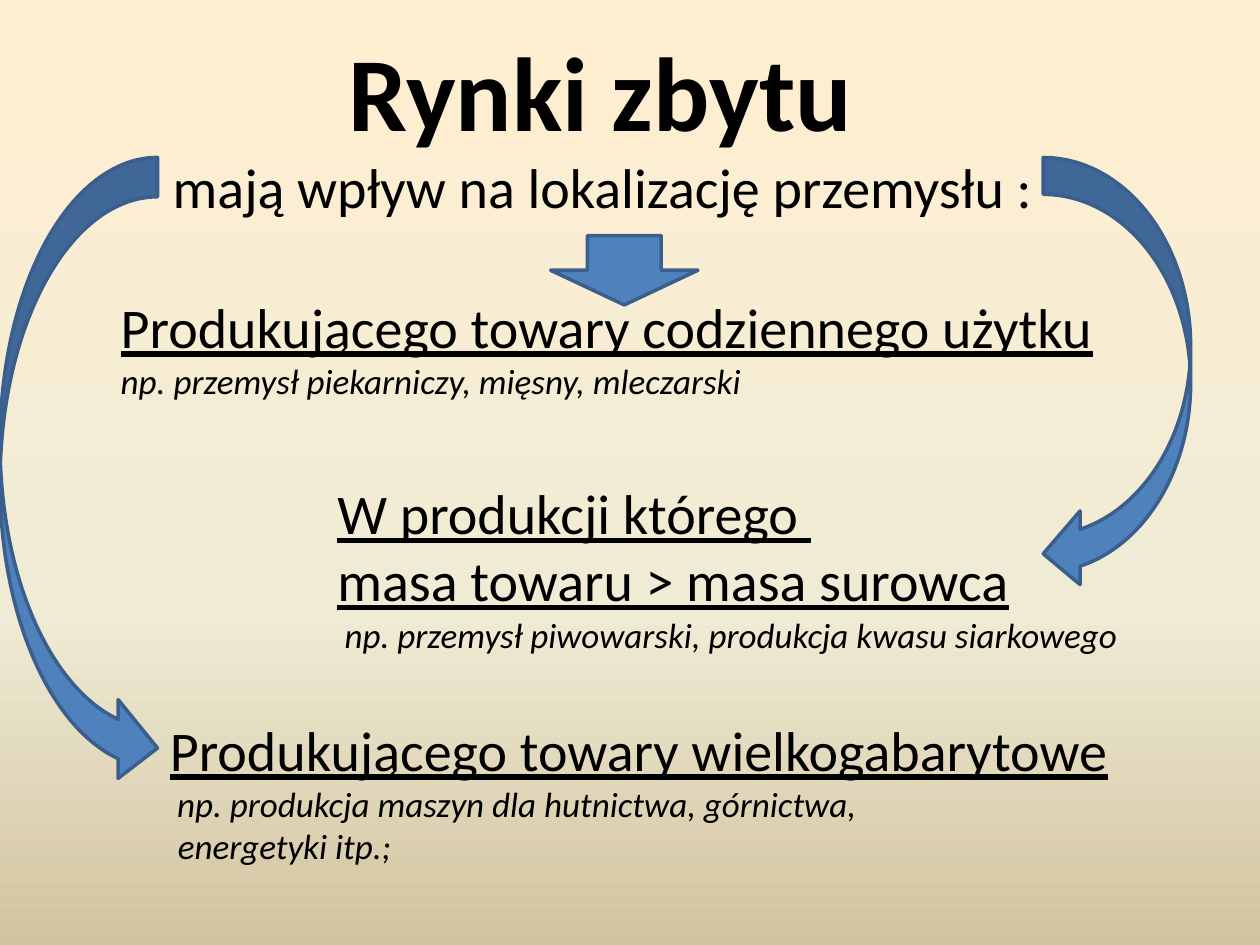
from copy import deepcopy
from dataclasses import dataclass

from pptx import Presentation
from pptx import util as u
from pptx.dml.color import RGBColor
from pptx.enum import shapes, text

# Palette and type
BLACK = RGBColor(0x00, 0x00, 0x00)
ARROW_FILL = RGBColor(0x4F, 0x81, 0xBD)
ARROW_LINE = RGBColor(0x3A, 0x5F, 0x8C)
BACKDROP = (
    (0, RGBColor(0xFF, 0xEF, 0xD1)),
    (0.65, RGBColor(0xF0, 0xEB, 0xD5)),
    (1, RGBColor(0xD1, 0xC3, 0x9F)),
)
FONT = "Calibri"
HEADING = dict(size=32, underline=True)
EXAMPLE = dict(size=20, italic=True)
INDENT = (" ", dict(size=18))

# Positions are counted in eighths of an inch
GRID = 8
COLUMNS, ROWS = 10 * GRID, 7.5 * GRID


@dataclass(frozen=True)
class Area:
    column: float
    row: float
    columns: float
    rows: float

    def lengths(self) -> list:
        return [u.Inches(n / GRID) for n in (self.column, self.row, self.columns, self.rows)]


@dataclass(frozen=True)
class Block:
    area: Area
    lines: tuple  # each line is a tuple of (wording, format) pairs


@dataclass(frozen=True)
class Arrow:
    kind: shapes.MSO_SHAPE
    area: Area


TITLE = Block(Area(9.36, 1.28, 57.52, 13.2), (
    (("Rynki zbytu", dict(size=60, bold=True)),),
    ((" mają wpływ na lokalizację przemysłu :", dict(size=32)),),
))

BLOCKS = (
    Block(Area(6.88, 18.16, 63.92, 7.84), (
        (("Produkującego towary codziennego użytku", HEADING),),
        (("np. przemysł piekarniczy, mięsny, mleczarski", EXAMPLE),),
    )),
    Block(Area(20.64, 30, 51.52, 12.08), (
        (("W produkcji którego ", HEADING),),
        (("masa towaru > masa surowca", HEADING),),
        (INDENT, ("np. przemysł piwowarski, produkcja kwasu siarkowego", EXAMPLE)),
    )),
    Block(Area(10, 45.04, 61.76, 10.48), (
        (("Produkującego towary wielkogabarytowe", HEADING),),
        (INDENT, ("np. produkcja maszyn dla hutnictwa, górnictwa,", EXAMPLE)),
        ((" energetyki itp.;", EXAMPLE),),
    )),
)

ARROWS = (
    Arrow(shapes.MSO_SHAPE.CURVED_RIGHT_ARROW, Area(0, 10, 10, 40)),
    Arrow(shapes.MSO_SHAPE.CURVED_LEFT_ARROW, Area(66.24, 10, 9.36, 27.5)),
    Arrow(shapes.MSO_SHAPE.DOWN_ARROW, Area(34.96, 14.96, 9.36, 4.4)),
)


def add_span(para, wording: str, *, size: float, bold: bool = False,
             italic: bool = False, underline: bool = False) -> None:
    span = para.add_run()
    span.text = wording
    font = span.font
    font.name, font.size = FONT, u.Pt(size)
    font.bold, font.italic, font.underline = bold, italic, underline
    font.color.rgb = BLACK


def fill_box(box, block: Block) -> None:
    box.left, box.top, box.width, box.height = block.area.lengths()
    frame = box.text_frame
    frame.word_wrap = False
    frame.auto_size = text.MSO_AUTO_SIZE.SHAPE_TO_FIT_TEXT
    frame.vertical_anchor = text.MSO_ANCHOR.TOP
    for index, line in enumerate(block.lines):
        para = frame.add_paragraph() if index else frame.paragraphs[0]
        para.alignment = text.PP_ALIGN.LEFT
        for wording, style in line:
            add_span(para, wording, **style)


def add_arrow(page, arrow: Arrow) -> None:
    shape = page.shapes.add_shape(arrow.kind, *arrow.area.lengths())
    shape.shadow.inherit = False
    shape.fill.solid()
    shape.fill.fore_color.rgb = ARROW_FILL
    shape.line.color.rgb = ARROW_LINE
    shape.line.width = u.Pt(2)


def paint_background(page) -> None:
    fill = page.background.fill
    fill.gradient()
    fill.gradient_angle = 270
    # The default gradient has two stops: add a third
    stop = page._element.xpath(".//p:bg//a:gs")[0]
    stop.addnext(deepcopy(stop))
    for stop, (position, color) in zip(fill.gradient_stops, BACKDROP):
        stop.position = position
        stop.color.rgb = color


def main() -> None:
    deck = Presentation()
    deck.slide_width = u.Inches(COLUMNS / GRID)
    deck.slide_height = u.Inches(ROWS / GRID)
    page = deck.slides.add_slide(deck.slide_layouts.get_by_name("Title Only"))
    paint_background(page)

    # Title with its lead-in line
    title = page.shapes.title
    fill_box(title, TITLE)
    title.text_frame.paragraphs[0].alignment = text.PP_ALIGN.CENTER

    # Kinds of industry with examples
    for block in BLOCKS:
        fill_box(page.shapes.add_textbox(0, 0, 0, 0), block)

    # Arrows from the title to each kind
    for arrow in ARROWS:
        add_arrow(page, arrow)

    deck.save("out.pptx")


if __name__ == "__main__":
    main()
